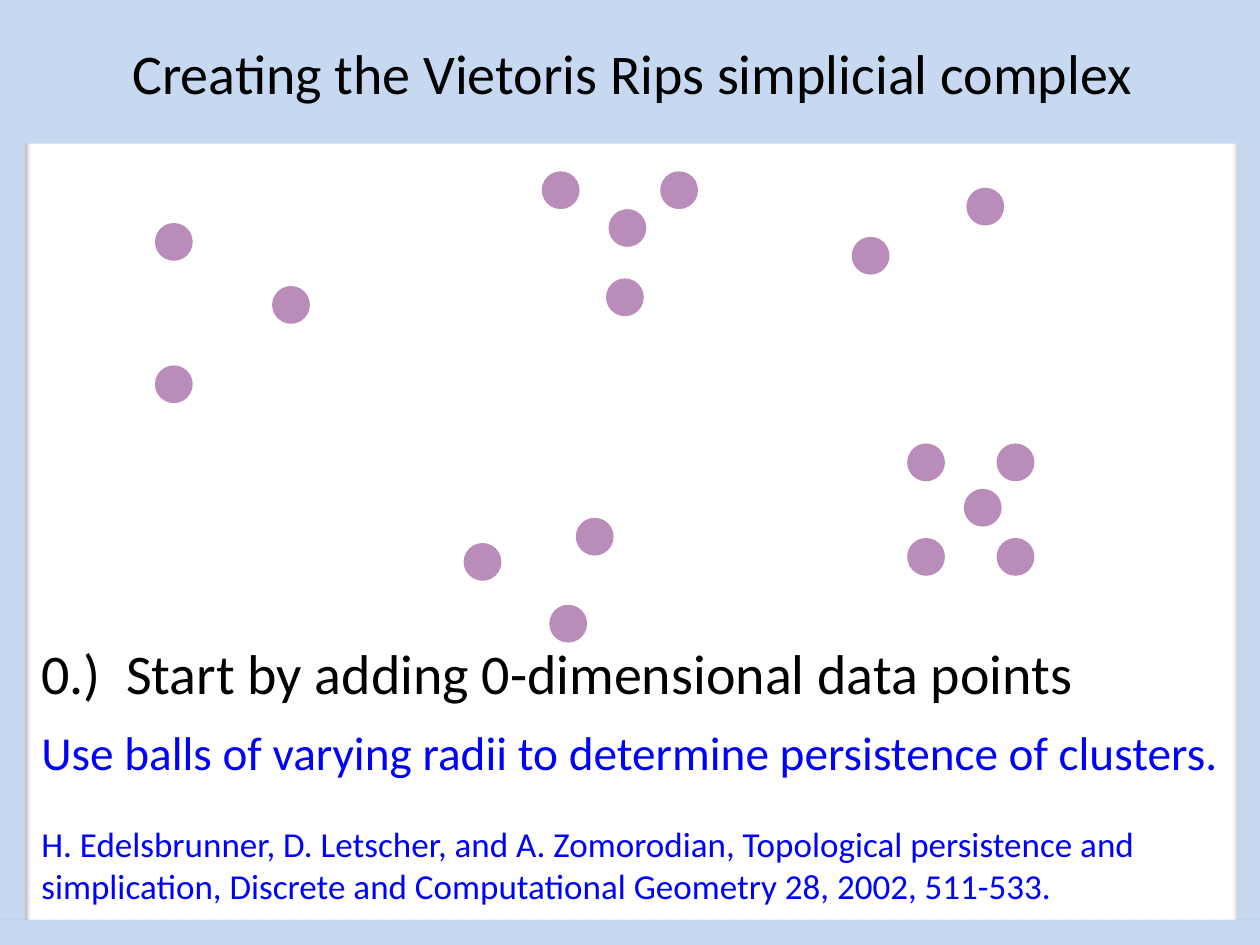
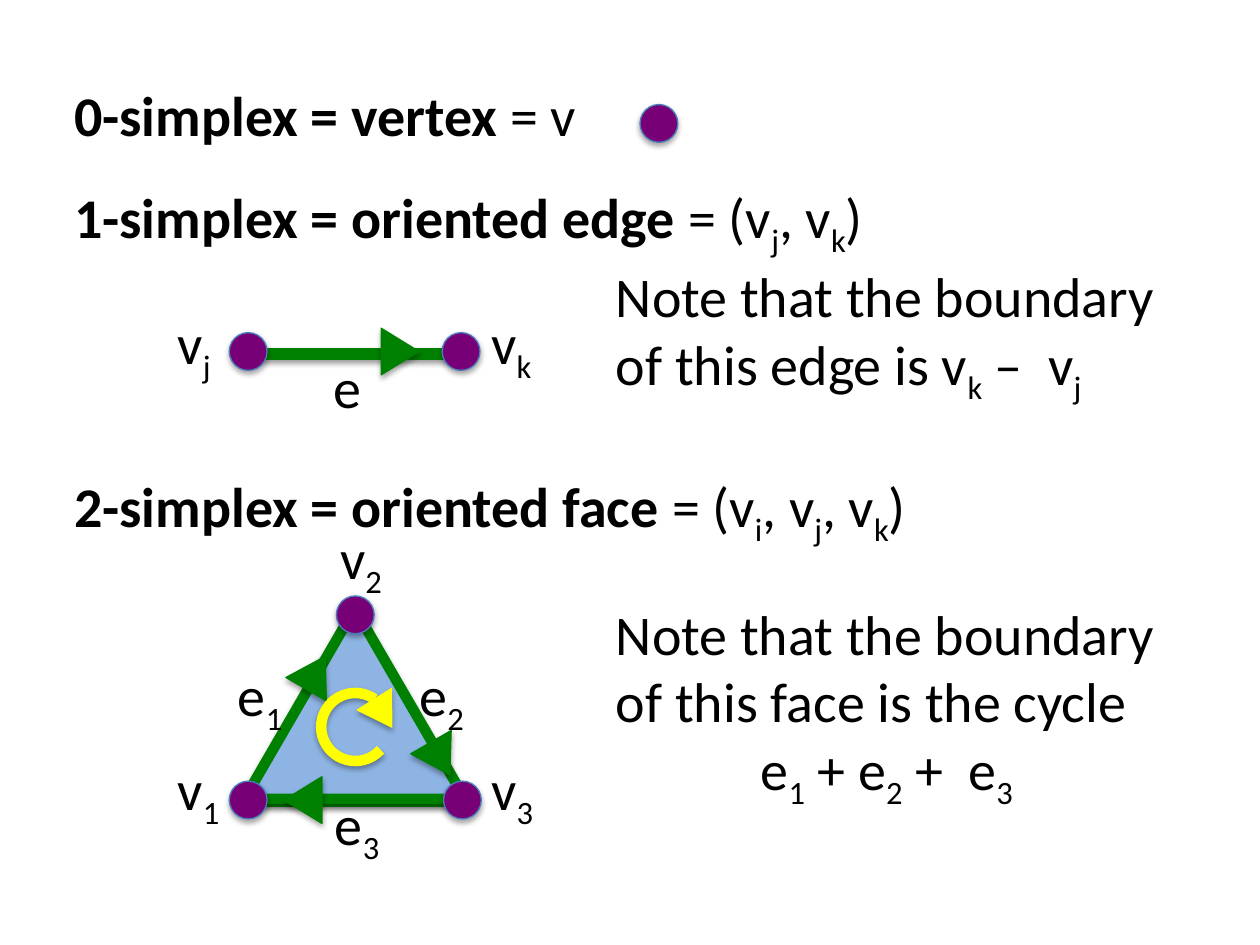
import pptx
import pptx.dml.color
import pptx.enum.shapes
import pptx.enum.text
import pptx.oxml
import pptx.oxml.ns
import pptx.util

Inches = pptx.util.Inches
Pt = pptx.util.Pt
RGB = pptx.dml.color.RGBColor.from_string
SHAPE = pptx.enum.shapes.MSO_SHAPE
FONT = "Calibri"
COLORS = {
    "band": "C6D9F1",
    "text": "000000",
    "note": "0000FF",
    "point": "660066",
    "vertex": "770077",
    "vertex_edge": "4B7EBC",
    "edge": "008000",
    "face": "8EB4E3",
    "cycle": "FFFF00",
}


def add_figure(slide, kind, box, fill=None, line=None, width=0.75, turn=0, shadow=True):
    figure = slide.shapes.add_shape(kind, *map(Inches, box))
    figure.rotation = turn
    if fill:
        figure.fill.solid()
        figure.fill.fore_color.rgb = RGB(COLORS[fill])
    else:
        figure.fill.background()
    if line:
        figure.line.color.rgb = RGB(COLORS[line])
        figure.line.width = Pt(width)
    else:
        figure.line.fill.background()
    if not shadow:
        figure.shadow.inherit = False
    return figure


def write(paragraph, text, size=32, color="text", bold=False):
    for index, part in enumerate(text.split("|")):
        if not part:
            continue
        run = paragraph.add_run()
        run.text = part
        run.font.name = FONT
        run.font.size = Pt(size)
        run.font.bold = bold
        run.font.color.rgb = RGB(COLORS[color])
        if index % 2:
            run.font._element.set("baseline", "-25000")


prs = pptx.Presentation()
prs.slide_width = Inches(10)
prs.slide_height = Inches(7.5)

rips = prs.slides.add_slide(prs.slide_layouts[5])
for box, shadow in [
    ((0, 0, 0.2, 7.5), True),
    ((9.82, 0, 0.2, 7.5), True),
    ((0.02, 0, 10.01, 0.2), False),
    ((-0.01, 7.3, 10.01, 0.2), True),
]:
    add_figure(rips, SHAPE.RECTANGLE, box, "band", shadow=shadow)

steps = rips.shapes.add_textbox(Inches(0.23), Inches(5.02), Inches(9.8), Inches(2.24)).text_frame
steps.word_wrap = True
for index, (text, size, color, gap) in enumerate([
    ("0.)  Start by adding 0-dimensional data points", 32, "text", 0),
    ("Use balls of varying radii to determine persistence of clusters.", 27, "note", 10),
    ("H. Edelsbrunner, D. Letscher, and A. Zomorodian, Topological persistence and", 20, "note", 24),
    ("simplication, Discrete and Computational Geometry 28, 2002, 511-533.", 20, "note", 0),
]):
    paragraph = steps.add_paragraph() if index else steps.paragraphs[0]
    paragraph.space_before = Pt(gap)
    write(paragraph, text, size, color)

for left, top in [
    (1.23, 2.9), (2.16, 2.27), (1.23, 1.77),
    (4.3, 1.36), (5.24, 1.36), (4.83, 1.66), (4.81, 2.21),
    (6.76, 1.88), (7.67, 1.49),
    (3.68, 4.31), (4.57, 4.11), (4.36, 4.8),
    (7.2, 3.52), (7.91, 3.52), (7.65, 3.88), (7.2, 4.27), (7.91, 4.27),
]:
    point = add_figure(rips, SHAPE.OVAL, (left, top, 0.3, 0.3), "point", shadow=False)
    point_color = point.element.spPr.find(".//" + pptx.oxml.ns.qn("a:srgbClr"))
    point_color.append(pptx.oxml.parse_xml(
        f'<a:alpha {pptx.oxml.ns.nsdecls("a")} val="45000"/>'))

title = rips.shapes.title
title.left, title.top, title.width, title.height = map(Inches, (0.02, 0, 10, 1.14))
title.fill.solid()
title.fill.fore_color.rgb = RGB(COLORS["band"])
title.text_frame.vertical_anchor = pptx.enum.text.MSO_ANCHOR.MIDDLE
title.text_frame.paragraphs[0].alignment = pptx.enum.text.PP_ALIGN.CENTER
write(title.text_frame.paragraphs[0], "Creating the Vietoris Rips simplicial complex")
title.element.getparent().append(title.element)

simplices = prs.slides.add_slide(prs.slide_layouts[6])
for start, end, y, width in [(3.61, 2.08, 6.37, 5), (3.6, 2.08, 2.81, 7)]:
    edge = simplices.shapes.add_connector(
        pptx.enum.shapes.MSO_CONNECTOR.STRAIGHT, Inches(start), Inches(y), Inches(end), Inches(y))
    edge.line.color.rgb = RGB(COLORS["edge"])
    edge.line.width = Pt(width)

add_figure(simplices, SHAPE.ISOSCELES_TRIANGLE, (1.94, 4.83, 1.75, 1.51), "face", "edge", 6)
for left, top in [(5.08, 0.83), (1.82, 2.64), (3.51, 2.64), (1.82, 6.2), (2.67, 4.73), (3.52, 6.2)]:
    add_figure(simplices, SHAPE.OVAL, (left, top, 0.3, 0.3), "vertex", "vertex_edge")

for left, top, turn in [(2.99, 2.64, 90), (2.32, 5.19, 30), (3.31, 5.87, 150), (2.22, 6.2, 270)]:
    add_figure(simplices, SHAPE.ISOSCELES_TRIANGLE, (left, top, 0.37, 0.3), "edge", "edge", turn=turn)

cycle = add_figure(simplices, SHAPE.ARC, (2.55, 5.5, 0.54, 0.54), line="cycle", width=6)
for index, degrees in enumerate((42, 305)):
    cycle.adjustments[index] = degrees * 0.6
add_figure(simplices, SHAPE.ISOSCELES_TRIANGLE, (2.88, 5.53, 0.32, 0.26), "cycle", "cycle", turn=148)

for box, bold_text, text in [
    ((0.49, 0.59, 9.05, 0.64), "0-simplex = vertex ", "= v"),
    ((0.49, 1.4, 9.05, 0.64), "1-simplex = oriented edge ", "= (v|j|, v|k|)"),
    ((0.49, 3.69, 9.05, 0.64), "2-simplex = oriented face ", "= (v|i|, v|j|, v|k|)"),
    ((4.79, 2.03, 4.74, 1.18), "", "Note that the boundary of this edge is v|k| –  v|j"),
    ((4.79, 4.71, 4.74, 1.72), "", "Note that the boundary of this face is the cycle"),
    ((1.31, 2.4, 0.71, 0.64), "", "v|j"),
    ((3.8, 2.4, 0.71, 0.64), "", "v|k"),
    ((2.55, 2.75, 0.71, 0.64), "", "e"),
    ((1.31, 5.94, 0.71, 0.64), "", "v|1"),
    ((2.6, 4.11, 0.71, 0.64), "", "v|2"),
    ((3.8, 5.94, 0.71, 0.64), "", "v|3"),
    ((1.79, 5.19, 0.71, 0.64), "", "e|1"),
    ((3.23, 5.19, 0.71, 0.64), "", "e|2"),
    ((2.56, 6.22, 0.71, 0.64), "", "e|3"),
]:
    wording = simplices.shapes.add_textbox(*map(Inches, box)).text_frame
    wording.word_wrap = True
    write(wording.paragraphs[0], bold_text, bold=True)
    write(wording.paragraphs[0], text)
    if text.endswith("the cycle"):
        boundary = wording.add_paragraph()
        boundary.alignment = pptx.enum.text.PP_ALIGN.LEFT
        boundary._p.get_or_add_pPr().set("marL", str(Inches(1.15)))
        write(boundary, "e|1| + e|2| +  e|3")

prs.save("out.pptx")
